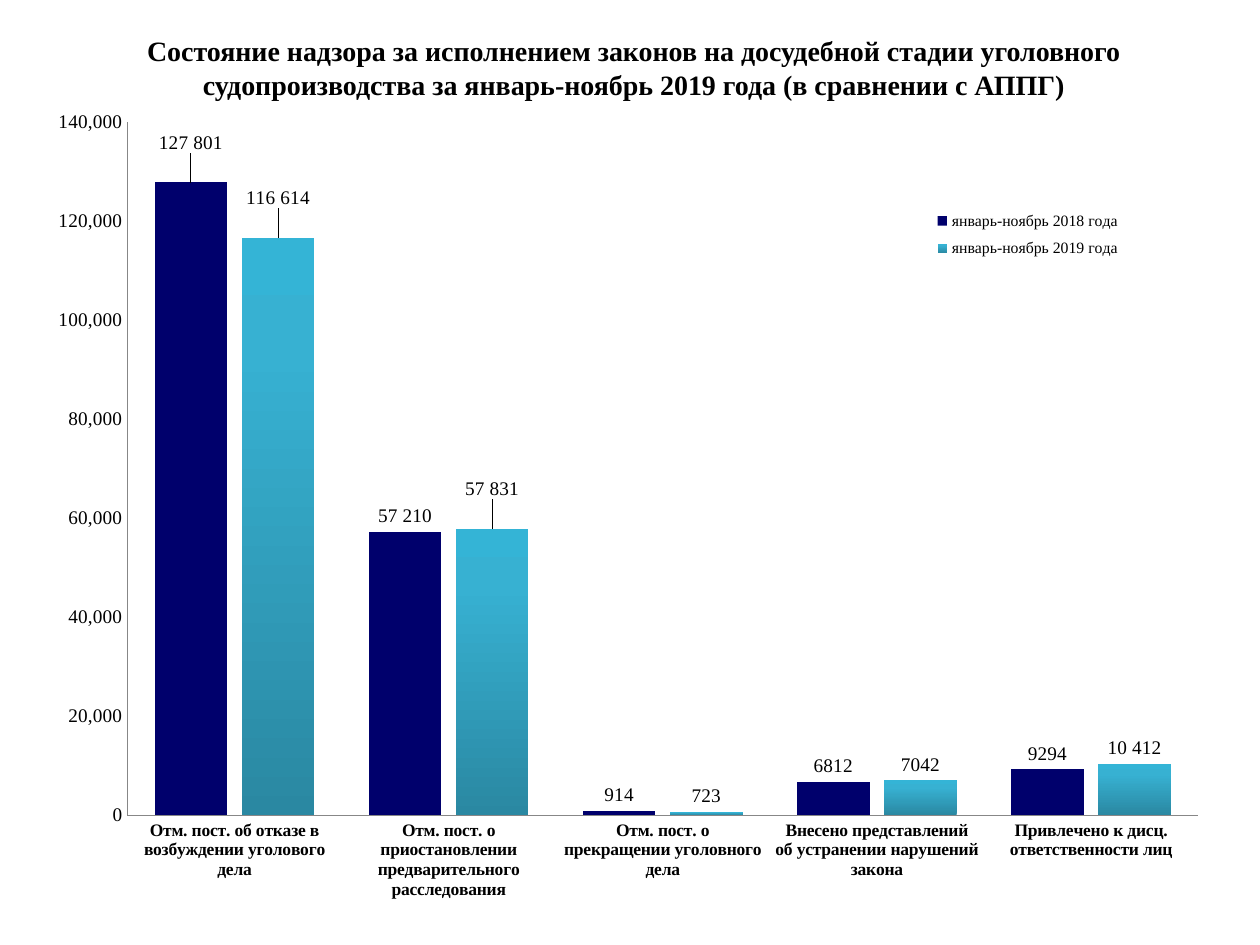
from copy import deepcopy

from lxml import etree
from pptx import Presentation
from pptx.chart.data import CategoryChartData
from pptx.dml.color import RGBColor
from pptx.enum.chart import XL_CHART_TYPE as ChartType
from pptx.enum.chart import XL_LABEL_POSITION as LabelPosition
from pptx.enum.chart import XL_LEGEND_POSITION as LegendPosition
from pptx.enum.chart import XL_TICK_MARK as TickMark
from pptx.enum.text import PP_ALIGN as Align
from pptx.oxml.ns import qn
from pptx.util import Cm, Pt

BLACK = RGBColor(0x00, 0x00, 0x00)
GREY = RGBColor(0x87, 0x87, 0x87)
NAVY = RGBColor(0x00, 0x00, 0x6C)
TEAL_STOPS = [
    (0, RGBColor(0x2A, 0x88, 0xA2)),
    (0.8, RGBColor(0x37, 0xB1, 0xD2)),
    (1, RGBColor(0x34, 0xB4, 0xD6)),
]
FONT = "Times New Roman"

CATEGORIES = [
    "Отм. пост. об отказе в возбуждении уголового дела",
    "Отм. пост. о приостановлении предварительного расследования",
    "Отм. пост. о прекращении уголовного дела",
    "Внесено представлений об устранении нарушений закона",
    "Привлечено к дисц. ответственности лиц",
]
RESULTS = {
    "январь-ноябрь 2018 года": [127801, 57210, 914, 6812, 9294],
    "январь-ноябрь 2019 года": [116614, 57831, 723, 7042, 10412],
}
RAISED_VALUES = {127801, 116614, 57831}


def style_font(font, size, bold=False):
    font.name = FONT
    font.size = Pt(size)
    font.bold = bold
    font.color.rgb = BLACK


def make_layout(**settings):
    """Return a c:layout element with the given manual settings."""
    layout = etree.Element(qn("c:layout"))
    manual = etree.SubElement(layout, qn("c:manualLayout"))
    for key, value in settings.items():
        etree.SubElement(manual, qn(f"c:{key}")).set("val", str(value))
    return layout


prs = Presentation()
prs.slide_width, prs.slide_height = Cm(25.4), Cm(19.05)
slide = prs.slides.add_slide(prs.slide_layouts[6])

# Heading
heading = slide.shapes.add_textbox(Cm(1.35), Cm(0.56), Cm(22.86), Cm(1.55))
heading.text_frame.word_wrap = True
paragraph = heading.text_frame.paragraphs[0]
paragraph.alignment = Align.CENTER
run = paragraph.add_run()
run.text = ("Состояние надзора за исполнением законов на досудебной стадии уголовного "
            "судопроизводства за январь-ноябрь 2019 года (в сравнении с АППГ)")
style_font(run.font, 16, bold=True)

# Chart
data = CategoryChartData(number_format="#,##0")
data.categories = CATEGORIES
for period, values in RESULTS.items():
    data.add_series(period, values)
chart = slide.shapes.add_chart(
    ChartType.COLUMN_CLUSTERED, Cm(0.91), Cm(2.13), Cm(23.72), Cm(16.26), data
).chart
chart.has_title = False
style_font(chart.font, 11)

plot = chart.plots[0]
plot.gap_width = 75
plot.overlap = -20
plot.vary_by_categories = False
plot_area = chart._chartSpace.chart.plotArea
for old_layout in plot_area.findall(qn("c:layout")):
    plot_area.remove(old_layout)
plot_area.insert(0, make_layout(layoutTarget="inner", xMode="edge", yMode="edge",
                                x=0.07, y=0.02, w=0.91, h=0.86))

# Axes
for axis, size, bold in ((chart.category_axis, 10, True), (chart.value_axis, 11, False)):
    axis.major_tick_mark = axis.minor_tick_mark = TickMark.NONE
    axis.has_major_gridlines = False
    axis.format.line.color.rgb = GREY
    axis.format.line.width = Pt(0.75)
    style_font(axis.tick_labels.font, size, bold)
counts = chart.value_axis
counts.minimum_scale, counts.maximum_scale, counts.major_unit = 0, 140000, 20000
counts.tick_labels.number_format = "#,##0"
counts.tick_labels.number_format_is_linked = False

# Legend
chart.has_legend = True
legend = chart.legend
legend.position = LegendPosition.RIGHT
legend.include_in_layout = False
style_font(legend.font, 9)
for old_layout in legend._element.findall(qn("c:layout")):
    legend._element.remove(old_layout)
legend._element.find(qn("c:legendPos")).addnext(
    make_layout(xMode="edge", yMode="edge", x=0.75, y=0.12, w=0.17, h=0.08))

# Column fills
previous, current = plot.series
previous.format.fill.solid()
previous.format.fill.fore_color.rgb = NAVY
gradient = current.format.fill
gradient.gradient()
gradient.gradient_angle = 90
stop_list = current._element.find(".//" + qn("a:gsLst"))
stop_list.append(deepcopy(stop_list[-1]))
for stop, (position, color) in zip(gradient.gradient_stops, TEAL_STOPS):
    stop.position = position
    stop.color.rgb = color

# Value labels: five digits and more are grouped by a space
for series in plot.series:
    series.invert_if_negative = False
    labels = series.data_labels
    labels.show_value = True
    labels.position = LabelPosition.OUTSIDE_END
    style_font(labels.font, 11)
    for index, value in enumerate(series.values):
        label = series.points[index].data_label
        run = label.text_frame.paragraphs[0].add_run()
        run.text = f"{value:,.0f}".replace(",", " ") if value >= 10000 else f"{value:.0f}"
        style_font(run.font, 11)
        label.position = LabelPosition.OUTSIDE_END
        if value in RAISED_VALUES:
            element = labels._element.findall(qn("c:dLbl"))[index]
            element.find(qn("c:idx")).addnext(make_layout(x=0, y=-0.03))

prs.save("out.pptx")
